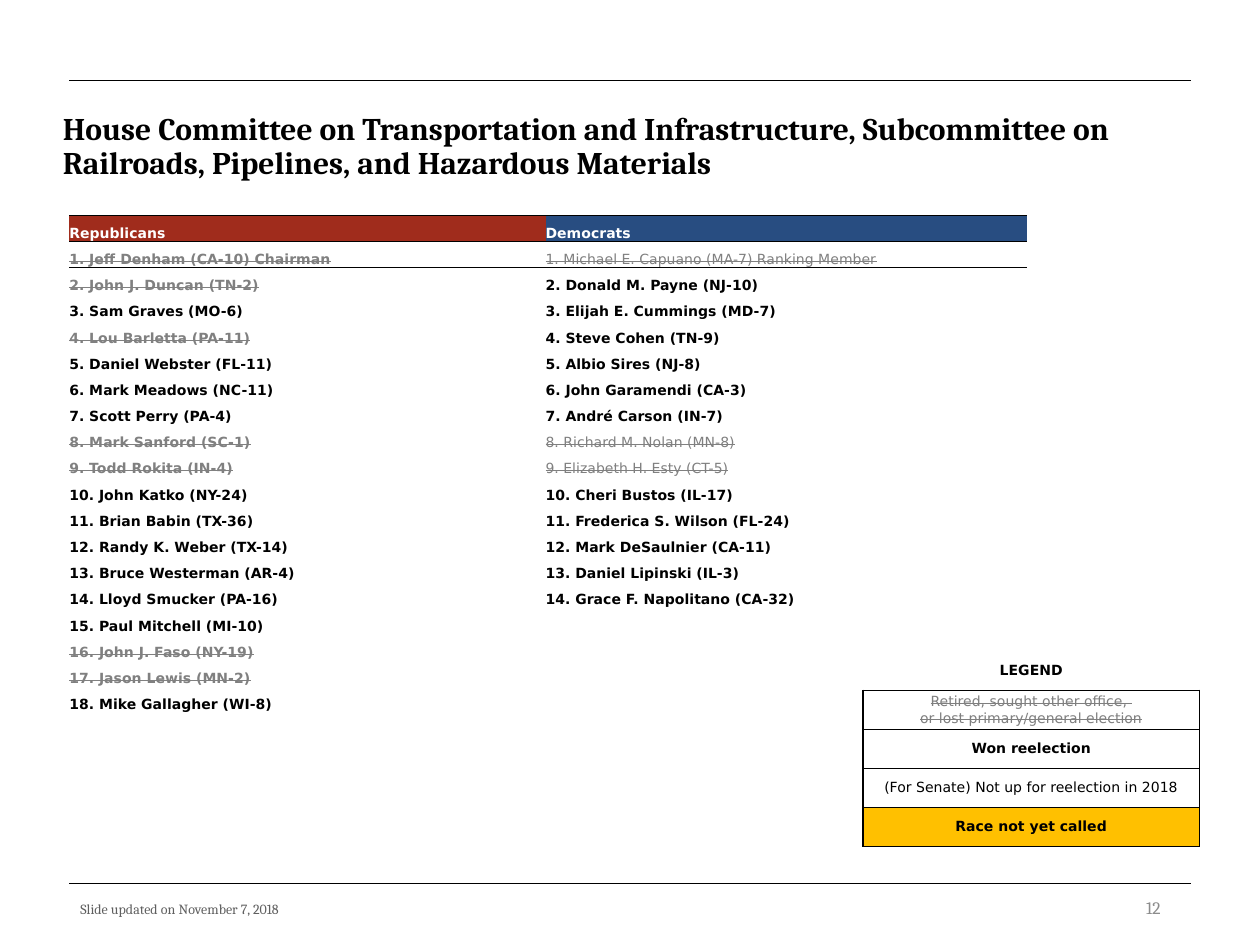
from lxml import etree
from pptx import Presentation
from pptx.dml.color import RGBColor
from pptx.enum.shapes import MSO_CONNECTOR
from pptx.enum.text import MSO_ANCHOR, PP_ALIGN
from pptx.oxml.ns import qn
from pptx.util import Inches, Pt

LEFT, CENTER, RIGHT = PP_ALIGN.LEFT, PP_ALIGN.CENTER, PP_ALIGN.RIGHT
TOP, MIDDLE, BOTTOM = MSO_ANCHOR.TOP, MSO_ANCHOR.MIDDLE, MSO_ANCHOR.BOTTOM
STRAIGHT = MSO_CONNECTOR.STRAIGHT
NO_STYLE = "{2D5ABB26-0587-4C30-8999-92F81FD0307C}"
SERIF, SANS = "Cambria", "DejaVu Sans"
BLACK, WHITE = "000000", "FFFFFF"

RED, BLUE, AMBER = "A02C1C", "284D81", "FFC000"
PLAIN = {"size": 8, "name": SANS, "color": BLACK, "bold": False}
WON = {**PLAIN, "bold": True}
HEADER = {**WON, "color": WHITE}
OUT = {**PLAIN, "color": "808080", "strike": True}
OUT_BOLD = {**OUT, "bold": True}

REPUBLICANS = [
    "Jeff Denham (CA-10) Chairman", "John J. Duncan (TN-2)", "Sam Graves (MO-6)",
    "Lou Barletta (PA-11)", "Daniel Webster (FL-11)", "Mark Meadows (NC-11)",
    "Scott Perry (PA-4)", "Mark Sanford (SC-1)", "Todd Rokita (IN-4)",
    "John Katko (NY-24)", "Brian Babin (TX-36)", "Randy K. Weber (TX-14)",
    "Bruce Westerman (AR-4)", "Lloyd Smucker (PA-16)", "Paul Mitchell (MI-10)",
    "John J. Faso (NY-19)", "Jason Lewis (MN-2)", "Mike Gallagher (WI-8)",
]
DEMOCRATS = [
    "Michael E. Capuano (MA-7) Ranking Member", "Donald M. Payne (NJ-10)",
    "Elijah E. Cummings (MD-7)", "Steve Cohen (TN-9)", "Albio Sires (NJ-8)",
    "John Garamendi (CA-3)", "André Carson (IN-7)", "Richard M. Nolan (MN-8)",
    "Elizabeth H. Esty (CT-5)", "Cheri Bustos (IL-17)",
    "Frederica S. Wilson (FL-24)", "Mark DeSaulnier (CA-11)",
    "Daniel Lipinski (IL-3)", "Grace F. Napolitano (CA-32)",
]
PARTIES = [
    ("Republicans", RED, REPUBLICANS, {1, 2, 4, 8, 9, 16, 17}, OUT_BOLD),
    ("Democrats", BLUE, DEMOCRATS, {1, 8, 9}, OUT),
]
LEGEND = [
    ("LEGEND", WON, None),
    ("Retired, sought other office, \nor lost primary/general election",
     {**OUT, "color": "7F7F7F"}, None),
    ("Won reelection", WON, None),
    ("(For Senate) Not up for reelection in 2018", PLAIN, None),
    ("Race not yet called", WON, AMBER),
]


def rgb(value):
    """Turn a hex string into a colour."""
    return RGBColor.from_string(value)


def write(tf, text, fmt, align=LEFT, spacing=None):
    """Fill a text frame, one paragraph for each line of text."""
    for i, line in enumerate(text.split("\n")):
        p = tf.add_paragraph() if i else tf.paragraphs[0]
        p.alignment = align
        if spacing:
            p.line_spacing = spacing
        r = p.add_run()
        r.text = line
        for key, value in fmt.items():
            if key == "color":
                r.font.color.rgb = rgb(value)
            elif key == "strike":
                r._r.get_or_add_rPr().set("strike", "sngStrike")
            else:
                setattr(r.font, key, Pt(value) if key == "size" else value)


def add_text(s, box, text, fmt, align=LEFT, anchor=TOP, spacing=None):
    """Add a wrapping text box."""
    tf = s.shapes.add_textbox(*map(Inches, box)).text_frame
    tf.word_wrap = True
    tf.vertical_anchor = anchor
    write(tf, text, fmt, align, spacing)


def add_rule(s, y):
    """Add a thin horizontal line across the slide."""
    line = s.shapes.add_connector(
        STRAIGHT, Inches(0.55), Inches(y), Inches(9.45), Inches(y))
    line.line.color.rgb = rgb(BLACK)
    line.line.width = Pt(0.5)
    etree.SubElement(line._element.spPr, qn("a:effectLst"))


def add_table(s, left, top, widths, row_height, rows):
    """Add an unstyled table with even rows."""
    frame = s.shapes.add_table(
        rows, len(widths), Inches(left), Inches(top),
        Inches(sum(widths)), Inches(row_height * rows))
    table = frame.table
    table.first_row = table.horz_banding = False
    table._tbl.tblPr.find(qn("a:tableStyleId")).text = NO_STYLE
    for column, width in zip(table.columns, widths):
        column.width = Inches(width)
    for row in table.rows:
        row.height = Inches(row_height)
    return table


def set_border(cell, sides, width):
    """Draw black borders on the given sides of a cell."""
    for side in sides:
        ln = etree.Element(qn(f"a:ln{side}"), w=str(Pt(width)))
        fill = etree.SubElement(ln, qn("a:solidFill"))
        etree.SubElement(fill, qn("a:srgbClr"), val=BLACK)
        cell._tc.get_or_add_tcPr().append(ln)


def fill_cell(cell, text, fmt, align, anchor, insets, fill=None, border=("", 0)):
    """Format one table cell and write its text."""
    cell.margin_left = cell.margin_right = Inches(insets[0])
    cell.margin_top = cell.margin_bottom = Inches(insets[1])
    cell.vertical_anchor = anchor
    set_border(cell, *border)
    if fill:
        cell.fill.solid()
        cell.fill.fore_color.rgb = rgb(fill)
    else:
        cell.fill.background()
    if text:
        write(cell.text_frame, text, fmt, align)
    else:
        p = cell.text_frame.paragraphs[0]
        etree.SubElement(p._p, qn("a:endParaRPr"), sz="800")


def add_members(s):
    """Add the numbered member list of both parties."""
    rows = max(len(names) for _, _, names, _, _ in PARTIES) + 1
    table = add_table(s, 0.55, 1.71, [3.78, 3.82], 3.95 / rows, rows)
    for col, (party, color, names, departed, out) in enumerate(PARTIES):
        fill_cell(table.cell(0, col), party, HEADER, LEFT, BOTTOM, (0, 0),
                  color, ("TB", 0.5))
        for n in range(1, rows):
            text = f"{n}. {names[n - 1]}" if n <= len(names) else ""
            fill_cell(table.cell(n, col), text, out if n in departed else WON,
                      LEFT, BOTTOM, (0, 0), border=("T" if n == 1 else "", 0.5))


def add_legend(s):
    """Add the legend with one framed row for each outcome."""
    table = add_table(s, 6.85, 5.17, [2.67], 0.31, len(LEGEND))
    for i, (text, fmt, fill) in enumerate(LEGEND):
        fill_cell(table.cell(i, 0), text, fmt, CENTER, MIDDLE, (0.04, 0.02),
                  fill, ("LRTB" if i else "B", 1))


def main():
    """Build the slide and save it."""
    prs = Presentation()
    prs.slide_width, prs.slide_height = Inches(10), Inches(7.5)
    s = prs.slides.add_slide(prs.slide_layouts[6])
    for y in (7.01, 0.64):
        add_rule(s, y)
    add_text(s, (0.54, 7.1, 4.4, 0.24), "Slide updated on November 7, 2018",
             {"size": 8, "name": SERIF, "color": "5F5F5F"})
    add_text(s, (0.4, 0.85, 9.2, 0.7),
             "House Committee on Transportation and Infrastructure, "
             "Subcommittee on Railroads, Pipelines, and Hazardous Materials",
             {"size": 18, "name": SERIF, "color": BLACK, "bold": True}, spacing=0.9)
    add_text(s, (7.06, 7.06, 2.25, 0.29), "12",
             {"size": 10, "name": SERIF, "color": "8C8C8C"}, RIGHT, MIDDLE)
    add_legend(s)
    add_members(s)
    prs.save("out.pptx")


if __name__ == "__main__":
    main()
